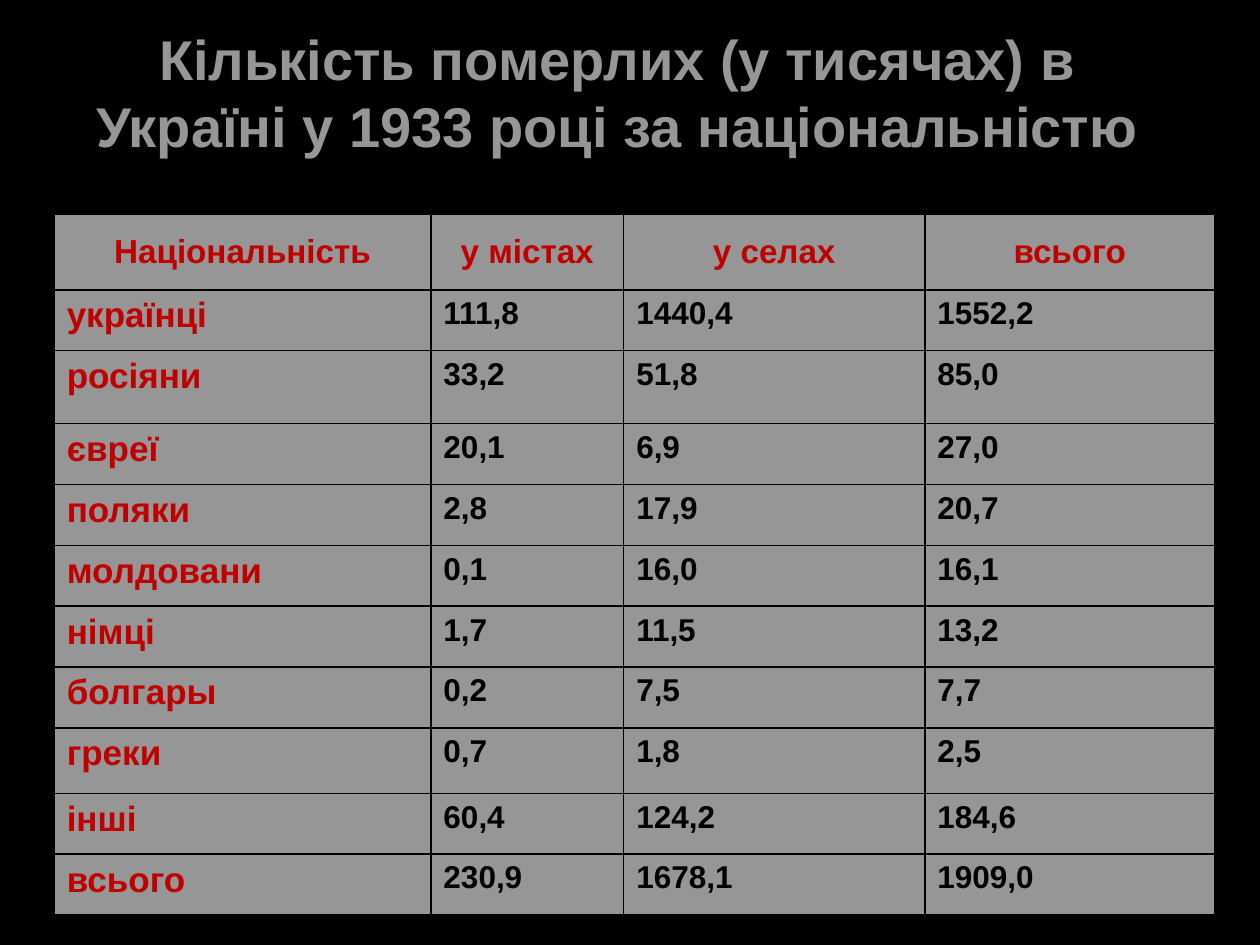
from dataclasses import dataclass

from lxml import etree
from pptx import Presentation
from pptx.dml.color import RGBColor
from pptx.enum.text import MSO_ANCHOR, PP_ALIGN
from pptx.oxml.ns import qn
from pptx.util import Inches, Pt

BLACK = RGBColor(0x00, 0x00, 0x00)
GREY = RGBColor(0x96, 0x96, 0x96)
RED = RGBColor(0xC0, 0x00, 0x00)
LEFT, CENTER = PP_ALIGN.LEFT, PP_ALIGN.CENTER
TOP, MIDDLE, BOTTOM = MSO_ANCHOR.TOP, MSO_ANCHOR.MIDDLE, MSO_ANCHOR.BOTTOM
FONT = "Arial"

TITLE = "Кількість померлих (у тисячах) в Україні у 1933 році за національністю"
ROWS = [
    ("Національність", "у містах", "у селах", "всього"),
    ("українці", "111,8", "1440,4", "1552,2"),
    ("росіяни", "33,2", "51,8", "85,0"),
    ("євреї", "20,1", "6,9", "27,0"),
    ("поляки", "2,8", "17,9", "20,7"),
    ("молдовани", "0,1", "16,0", "16,1"),
    ("німці", "1,7", "11,5", "13,2"),
    ("болгары", "0,2", "7,5", "7,7"),
    ("греки", "0,7", "1,8", "2,5"),
    ("інші", "60,4", "124,2", "184,6"),
    ("всього", "230,9", "1678,1", "1909,0"),
]
COL_WIDTHS = [2.99, 1.53, 2.39, 2.3]
ROW_HEIGHT = 0.483
TALL_ROWS = {0: 0.6, 2: 0.58, 8: 0.52}


@dataclass(frozen=True)
class TextStyle:
    size: int
    color: RGBColor
    align: PP_ALIGN = LEFT
    anchor: MSO_ANCHOR = TOP


TITLE_STYLE = TextStyle(32, GREY, CENTER, BOTTOM)
HEADER = TextStyle(19, RED, CENTER, MIDDLE)
NATIONALITY = TextStyle(20, RED)
VALUE = TextStyle(18, BLACK)


def write(tf, text: str, style: TextStyle) -> None:
    tf.text = text
    p = tf.paragraphs[0]
    p.alignment = style.align
    font = p.runs[0].font
    font.name, font.size, font.bold = FONT, Pt(style.size), True
    font.color.rgb = style.color


def add_borders(cell, color: RGBColor, width: float) -> None:
    tc_pr = cell._tc.get_or_add_tcPr()
    for i, side in enumerate(("lnL", "lnR", "lnT", "lnB")):
        ln = etree.Element(qn(f"a:{side}"), w=str(Pt(width)))
        fill = etree.SubElement(ln, qn("a:solidFill"))
        etree.SubElement(fill, qn("a:srgbClr"), val=str(color))
        tc_pr.insert(i, ln)


def fill_cell(cell, text: str, style: TextStyle) -> None:
    cell.fill.solid()
    cell.fill.fore_color.rgb = GREY
    cell.vertical_anchor = style.anchor
    write(cell.text_frame, text, style)
    add_borders(cell, BLACK, 1)


def style_for(row: int, col: int) -> TextStyle:
    if row == 0:
        return HEADER
    return NATIONALITY if col == 0 else VALUE


def main() -> None:
    prs = Presentation()
    prs.slide_width, prs.slide_height = Inches(10), Inches(7.5)
    s = prs.slides.add_slide(prs.slide_layouts[6])
    s.background.fill.solid()
    s.background.fill.fore_color.rgb = BLACK

    # Title
    sp = s.shapes.add_textbox(Inches(0.39), Inches(0.13), Inches(9.02), Inches(1.18))
    tf = sp.text_frame
    tf.word_wrap = True
    tf.vertical_anchor = TITLE_STYLE.anchor
    write(tf, TITLE, TITLE_STYLE)

    # Table of deaths by nationality
    heights = [TALL_ROWS.get(i, ROW_HEIGHT) for i in range(len(ROWS))]
    table = s.shapes.add_table(
        len(ROWS), len(COL_WIDTHS), Inches(0.43), Inches(1.7),
        Inches(sum(COL_WIDTHS)), Inches(sum(heights)),
    ).table
    for column, width in zip(table.columns, COL_WIDTHS):
        column.width = Inches(width)
    for row, height in zip(table.rows, heights):
        row.height = Inches(height)
    for i, texts in enumerate(ROWS):
        for j, text in enumerate(texts):
            fill_cell(table.cell(i, j), text, style_for(i, j))

    prs.save("out.pptx")


if __name__ == "__main__":
    main()
